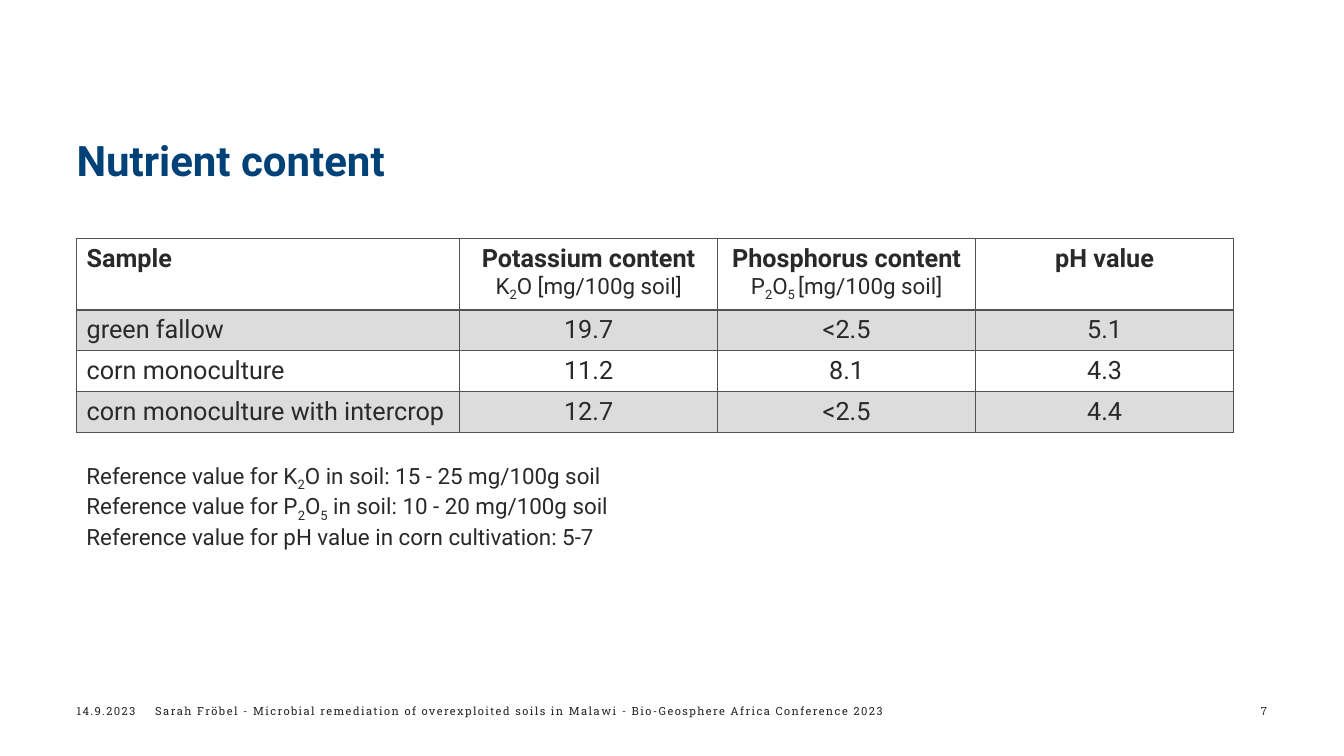
from lxml.etree import SubElement
from pptx import Presentation
from pptx.dml.color import RGBColor
from pptx.enum.text import MSO_ANCHOR, PP_ALIGN
from pptx.oxml.ns import qn
from pptx.util import Pt

COLORS = {"title": "004178", "text": "292928", "line": "525250"}
LEFT = 54.72
SUB = "_"  # text between two of these marks is subscript

TITLE = "Nutrient content"
HEADS = [
    ("Sample", None),
    ("Potassium content", "K_2_O [mg/100g soil]"),
    ("Phosphorus content", "P_2_O_5 _[mg/100g soil]"),
    ("pH value", None),
]
SAMPLES = [
    ("green fallow", "19.7", "<2.5", "5.1"),
    ("corn monoculture", "11.2", "8.1", "4.3"),
    ("corn monoculture with intercrop", "12.7", "<2.5", "4.4"),
]
NOTES = [
    "Reference value for K_2_O in soil: 15 - 25 mg/100g soil",
    "Reference value for P_2_O_5_ in soil: 10 - 20 mg/100g soil",
    "Reference value for pH value in corn cultivation: 5-7",
]
FOOTER = [  # text, left, width, align, letter spacing
    ("14.9.2023", LEFT, 56, PP_ALIGN.LEFT, 1),
    ("Sarah Fröbel - Microbial remediation of overexploited soils in Malawi"
     " - Bio-Geosphere Africa Conference 2023", 110.9, 720, PP_ALIGN.LEFT, 1),
    ("7", 839.5, 65.5, PP_ALIGN.RIGHT, 0),
]
COLS = [273.6, 184.3, 184.3, 184.3]
ROWS = [50] + [29.3] * len(SAMPLES)


def write(para, text, size=18, color="text", font="Roboto", bold=False,
          align=PP_ALIGN.LEFT, space=0, line=None):
    """Fill a paragraph, setting the marked parts as subscript."""
    para.alignment = align
    if line:
        para.line_spacing = line
    for i, part in enumerate(text.split(SUB)):
        run = para.add_run()
        run.text = part
        run.font.size, run.font.name, run.font.bold = Pt(size), font, bold
        run.font.color.rgb = RGBColor.from_string(COLORS[color])
        props = run._r.get_or_add_rPr()
        if i % 2:
            props.set("baseline", "-25000")
        if space:
            props.set("spc", str(space * 100))


def add_box(slide, left, top, width, height, pad=(0, 0),
            anchor=MSO_ANCHOR.TOP, wrap=True):
    box = slide.shapes.add_textbox(Pt(left), Pt(top), Pt(width), Pt(height))
    frame = box.text_frame
    frame.word_wrap, frame.vertical_anchor = wrap, anchor
    frame.margin_left = frame.margin_right = Pt(pad[0])
    frame.margin_top = frame.margin_bottom = Pt(pad[1])
    return frame


def style(cell, row):
    """Draw the borders of a cell and tint every other row."""
    props = cell._tc.get_or_add_tcPr()
    for side in ("L", "R", "T", "B"):
        thick = (side == "B" and row == 0) or (side == "T" and row == 1)
        edge = SubElement(props, qn(f"a:ln{side}"), w=str(Pt(2 if thick else 1)))
        fill = SubElement(edge, qn("a:solidFill"))
        SubElement(fill, qn("a:srgbClr"), val=COLORS["line"])
    if row % 2:
        cell.fill.solid()
        cell.fill.fore_color.rgb = RGBColor.from_string(COLORS["line"])
        tint = props.find(qn("a:solidFill")).find(qn("a:srgbClr"))
        SubElement(tint, qn("a:alpha"), val="20000")
    else:
        cell.fill.background()


def add_grid(slide):
    grid = slide.shapes.add_table(len(ROWS), len(COLS), Pt(LEFT), Pt(170.6),
                                  Pt(sum(COLS)), Pt(sum(ROWS))).table
    for col, width in zip(grid.columns, COLS):
        col.width = Pt(width)
    for row, height in zip(grid.rows, ROWS):
        row.height = Pt(height)
    body = [[(text, None) for text in sample] for sample in SAMPLES]
    for r, cells in enumerate([HEADS] + body):
        for c, (text, unit) in enumerate(cells):
            cell = grid.cell(r, c)
            align = PP_ALIGN.CENTER if c else PP_ALIGN.LEFT
            frame = cell.text_frame
            write(frame.paragraphs[0], text, bold=r == 0, align=align)
            if unit:
                write(frame.add_paragraph(), unit, size=16, align=align)
            style(cell, r)


def main():
    deck = Presentation()
    deck.slide_width, deck.slide_height = Pt(960), Pt(540)
    slide = deck.slides.add_slide(deck.slide_layouts[6])

    title = add_box(slide, LEFT, 100, 850, 58)
    write(title.paragraphs[0], TITLE, size=30, color="title", bold=True, line=0.9)

    add_grid(slide)

    notes = add_box(slide, LEFT, 326.5, 390, 67, pad=(7.2, 3.6), wrap=False)
    for i, note in enumerate(NOTES):
        para = notes.add_paragraph() if i else notes.paragraphs[0]
        write(para, note, size=16)

    for text, left, width, align, space in FOOTER:
        foot = add_box(slide, left, 486.7, width, 43, anchor=MSO_ANCHOR.MIDDLE)
        write(foot.paragraphs[0], text, size=8, font="Roboto Slab",
              align=align, space=space)

    deck.save("out.pptx")


if __name__ == "__main__":
    main()
